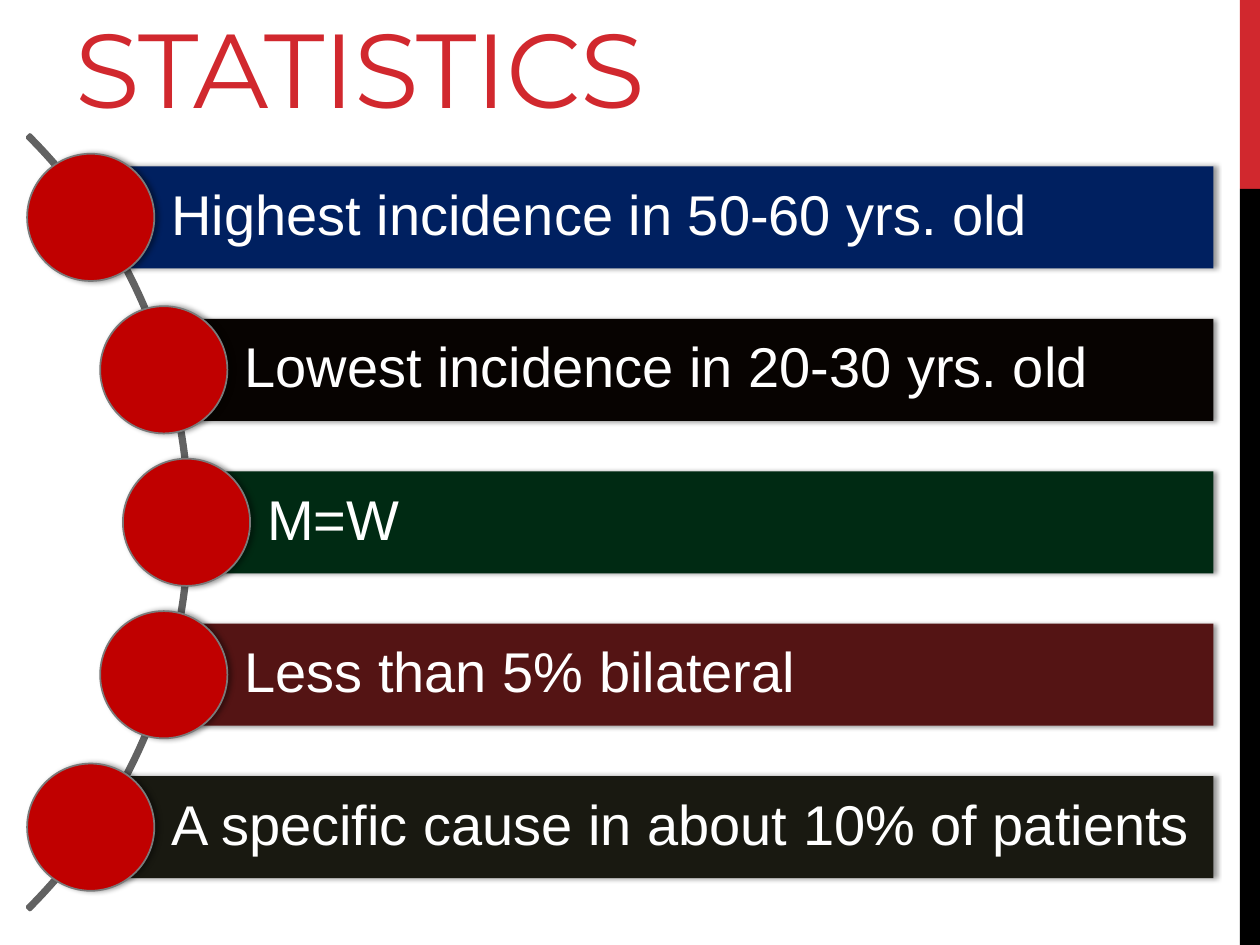
from dataclasses import dataclass

from lxml.etree import SubElement
from pptx import Presentation
from pptx.dml.color import RGBColor
from pptx.enum.shapes import MSO_SHAPE
from pptx.enum.text import MSO_ANCHOR, MSO_AUTO_SIZE, PP_ALIGN
from pptx.oxml.ns import qn
from pptx.shapes.autoshape import Shape
from pptx.slide import Slide
from pptx.util import Inches, Pt


@dataclass(frozen=True)
class Theme:
    accent: str = "D1282E"
    black: str = "000000"
    white: str = "FFFFFF"
    arc: str = "626262"
    circle: str = "C00000"
    circle_line: str = "7A7A7A"
    title_font: str = "Montserrat"
    body_font: str = "Arial"
    title_size: int = 60
    body_size: int = 32


@dataclass(frozen=True)
class Fact:
    text: str
    left: float
    color: str


THEME = Theme()
FACTS = [
    Fact("Highest incidence in 50-60 yrs. old", 0.72, "002060"),
    Fact("Lowest incidence in 20-30 yrs. old", 1.3, "070301"),
    Fact("M=W", 1.48, "002A13"),
    Fact("Less than 5% bilateral", 1.3, "541414"),
    Fact("A specific cause in about 10% of patients", 0.72, "191911"),
]
BAR_RIGHT, BAR_HEIGHT = 9.63, 0.81
FIRST_TOP, ROW_STEP = 1.32, 1.21
CIRCLE_SIZE = 1.01


def add_shape(page: Slide, kind: MSO_SHAPE, left: float, top: float,
              width: float, height: float, fill: str | None = None,
              line: str | None = None, line_width: float = 1) -> Shape:
    shape = page.shapes.add_shape(
        kind, Inches(left), Inches(top), Inches(width), Inches(height))
    shape.shadow.inherit = False
    if fill:
        shape.fill.solid()
        shape.fill.fore_color.rgb = RGBColor.from_string(fill)
    else:
        shape.fill.background()
    if line:
        shape.line.color.rgb = RGBColor.from_string(line)
        shape.line.width = Pt(line_width)
    else:
        shape.line.fill.background()
    return shape


def add_shadow(shape: Shape) -> None:
    effects = shape.element.spPr.find(qn("a:effectLst"))
    shadow = SubElement(effects, qn("a:outerShdw"), blurRad=str(Pt(3.1)),
                        dist=str(Pt(1.8)), dir="0", rotWithShape="0")
    color = SubElement(shadow, qn("a:srgbClr"), val=THEME.black)
    SubElement(color, qn("a:alpha"), val="40000")


def add_title(page: Slide, text: str) -> None:
    title = page.shapes.title
    title.left, title.top = Inches(0.5), Inches(0.17)
    title.width, title.height = Inches(9.15), Inches(0.91)
    frame = title.text_frame
    frame.auto_size = MSO_AUTO_SIZE.NONE
    frame.vertical_anchor = MSO_ANCHOR.BOTTOM
    para = frame.paragraphs[0]
    para.alignment = PP_ALIGN.LEFT
    span = para.add_run()
    span.text = text
    span.font.name = THEME.title_font
    span.font.size = Pt(THEME.title_size)
    span.font.color.rgb = RGBColor.from_string(THEME.accent)
    span.font._element.set("spc", "-60")


def add_fact(page: Slide, fact: Fact, top: float) -> None:
    # Bar with its text
    bar = add_shape(page, MSO_SHAPE.RECTANGLE, fact.left, top,
                    BAR_RIGHT - fact.left, BAR_HEIGHT, fact.color)
    add_shadow(bar)
    frame = bar.text_frame
    frame.word_wrap = True
    frame.vertical_anchor = MSO_ANCHOR.MIDDLE
    frame.margin_left = Inches(0.64)
    frame.margin_top = frame.margin_right = frame.margin_bottom = Inches(0.09)
    para = frame.paragraphs[0]
    para.alignment = PP_ALIGN.LEFT
    para.line_spacing = 0.9
    span = para.add_run()
    span.text = fact.text
    span.font.name = THEME.body_font
    span.font.size = Pt(THEME.body_size)
    span.font.color.rgb = RGBColor.from_string(THEME.white)

    # Circle centred on the bar's left edge
    circle = add_shape(page, MSO_SHAPE.OVAL, fact.left - CIRCLE_SIZE / 2,
                       top + (BAR_HEIGHT - CIRCLE_SIZE) / 2,
                       CIRCLE_SIZE, CIRCLE_SIZE, THEME.circle, THEME.circle_line)
    add_shadow(circle)


def main() -> None:
    deck = Presentation()
    deck.slide_width, deck.slide_height = Inches(10), Inches(7.5)
    page = deck.slides.add_slide(deck.slide_layouts[5])

    # Side stripe
    add_shape(page, MSO_SHAPE.RECTANGLE, 9.84, 0, 0.16, 1.5, THEME.accent)
    add_shape(page, MSO_SHAPE.RECTANGLE, 9.84, 1.5, 0.16, 6, THEME.black)

    add_title(page, "STATISTICS")

    # Arc behind the circles
    arc = add_shape(page, MSO_SHAPE.BLOCK_ARC, -7.18, -0.2, 8.69, 8.69,
                    line=THEME.arc, line_width=2.25)
    for index, value in enumerate((189, 27, 0.003)):
        arc.adjustments[index] = value

    for row, fact in enumerate(FACTS):
        add_fact(page, fact, FIRST_TOP + row * ROW_STEP)

    deck.save("out.pptx")


if __name__ == "__main__":
    main()
